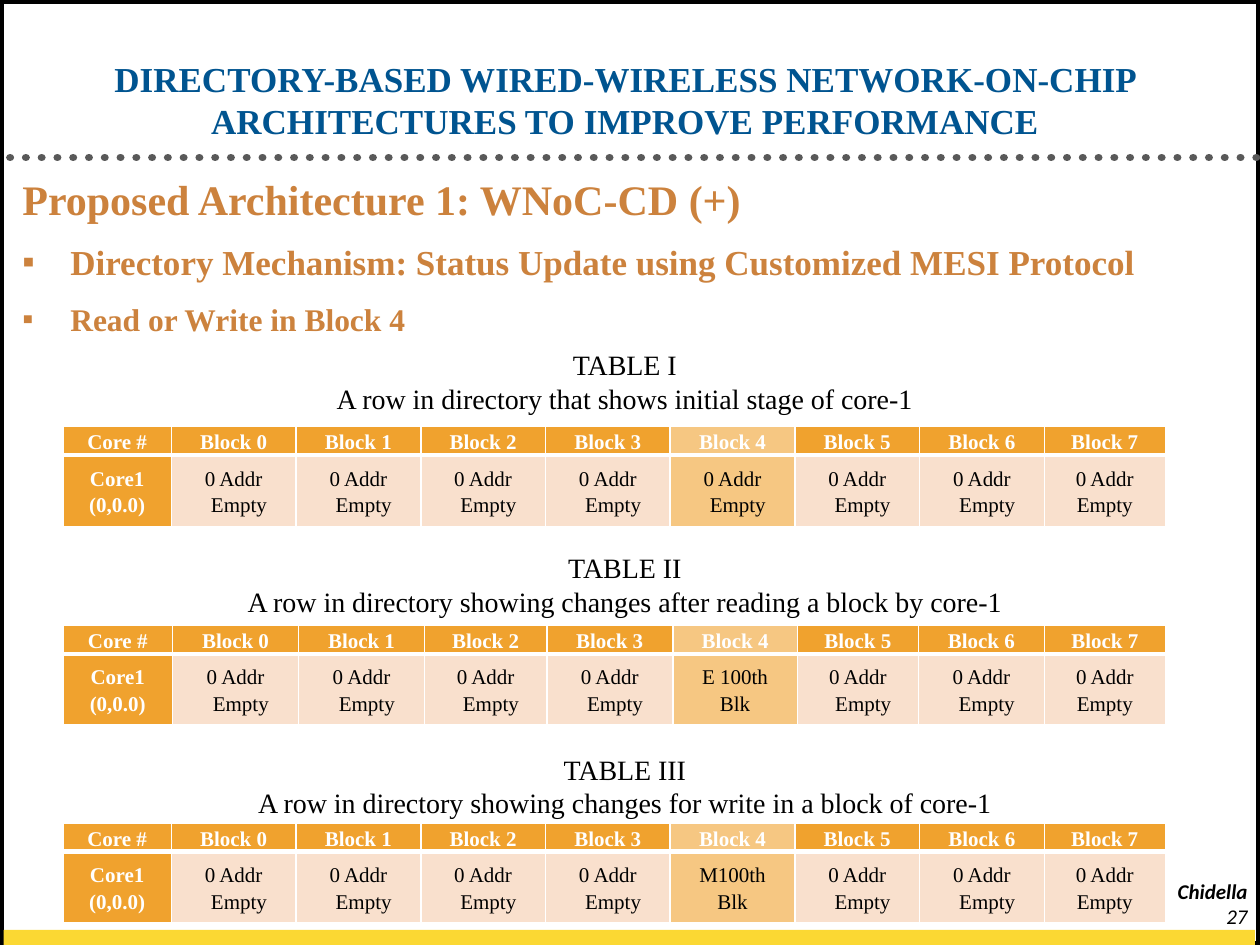
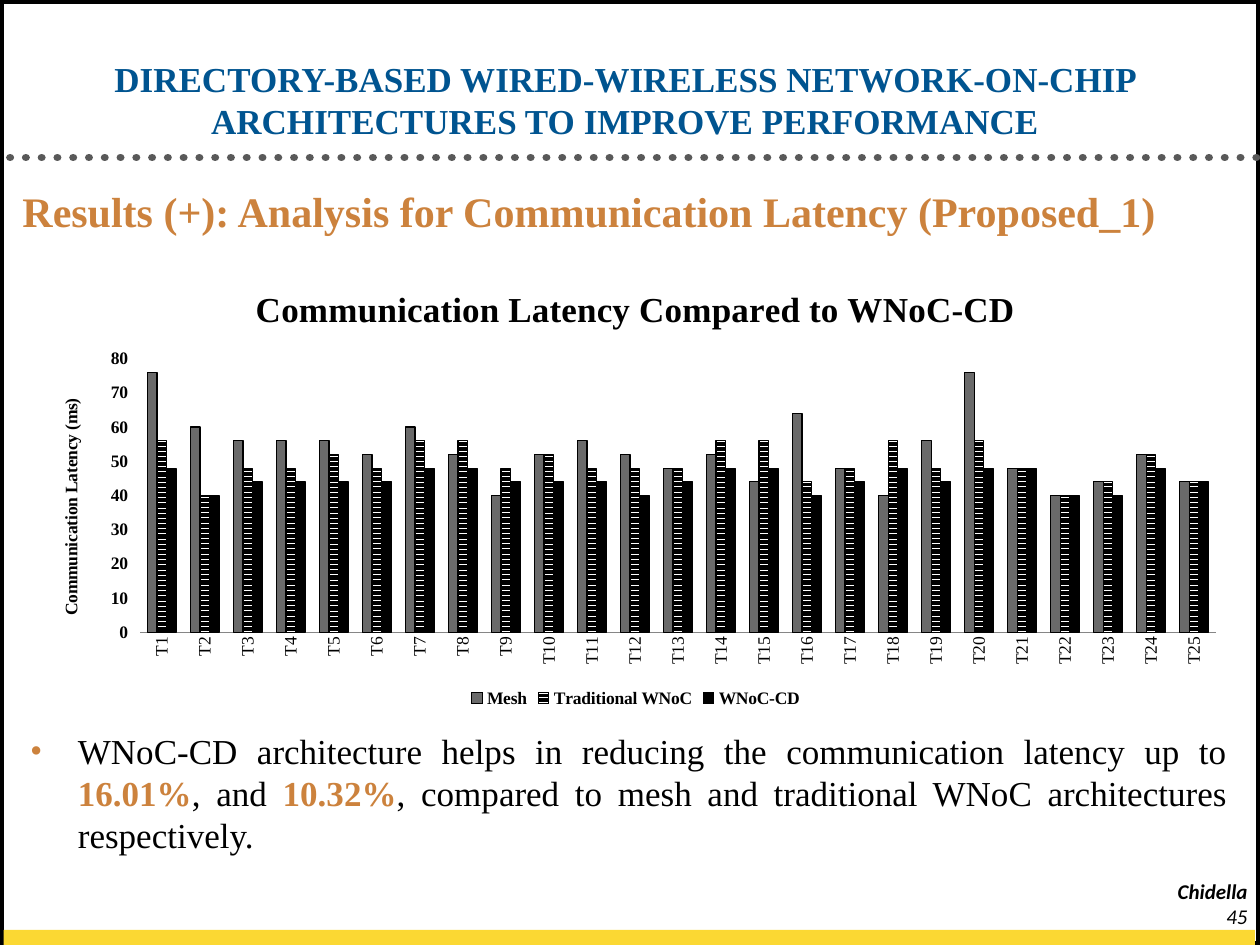
from dataclasses import dataclass

from lxml.etree import SubElement
from pptx import Presentation
from pptx.chart.data import CategoryChartData
from pptx.dml.color import RGBColor
from pptx.enum.chart import XL_CHART_TYPE, XL_LEGEND_POSITION, XL_TICK_MARK
from pptx.enum.dml import MSO_LINE, MSO_PATTERN
from pptx.enum.shapes import MSO_CONNECTOR, MSO_SHAPE
from pptx.enum.text import MSO_ANCHOR, MSO_AUTO_SIZE, PP_ALIGN
from pptx.oxml import parse_xml
from pptx.oxml.ns import nsdecls, qn
from pptx.util import Inches, Pt

# ---- Content ----
TITLE = ("DIRECTORY-BASED WIRED-WIRELESS NETWORK-ON-CHIP "
         "ARCHITECTURES TO IMPROVE PERFORMANCE")
AUTHOR = "Chidella"

DIRECTORY_PAGE = "27"
DIRECTORY_HEADING = "Proposed Architecture 1: WNoC-CD (+)"
DIRECTORY_POINTS = [
    ("Directory Mechanism: Status Update using Customized MESI Protocol", 20),
    ("Read or Write in Block 4", 18),
]
BLOCK_COUNT = 8
CHANGED_BLOCK = 4
CORE = ("Core1", "(0,0.0)")
EMPTY_BLOCK = ("0 Addr", "Empty")
EVEN_COLUMNS = [0.86] + [0.99] * 7 + [0.96]
DIRECTORY_TABLES = [
    dict(name="TABLE I", caption="A row in directory that shows initial stage of core-1",
         changed=EMPTY_BLOCK, caption_top=2.76, top=3.38, rows=(0.21, 0.57),
         columns=EVEN_COLUMNS),
    dict(name="TABLE II",
         caption="A row in directory showing changes after reading a block by core-1",
         changed=("E 100th", "Blk"), caption_top=4.37, top=4.96, rows=(0.23, 0.56),
         columns=[0.87, 1, 1, 0.97, 1, 0.99, 0.96, 1, 0.96]),
    dict(name="TABLE III",
         caption="A row in directory showing changes for write in a block of core-1",
         changed=("M100th", "Blk"), caption_top=5.97, top=6.53, rows=(0.21, 0.56),
         columns=EVEN_COLUMNS),
]

LATENCY_PAGE = "45"
LATENCY_HEADING = "Results (+): Analysis for Communication Latency (Proposed_1)"
LATENCY_CHART_TITLE = "Communication Latency Compared to WNoC-CD"
LATENCY_AXIS_TITLE = "Communication Latency (ms)"
LATENCY = {
    "Mesh": [76, 60, 56, 56, 56, 52, 60, 52, 40, 52, 56, 52, 48,
             52, 44, 64, 48, 40, 56, 76, 48, 40, 44, 52, 44],
    "Traditional WNoC": [56, 40, 48, 48, 52, 48, 56, 56, 48, 52, 48, 48, 48,
                         56, 56, 44, 48, 56, 48, 56, 48, 40, 44, 52, 44],
    "WNoC-CD": [48, 40, 44, 44, 44, 44, 48, 48, 44, 44, 44, 40, 44,
                48, 48, 40, 44, 48, 44, 48, 48, 40, 40, 48, 44],
}
EMPHASIS = dict(color="CC823D", bold=True)
LATENCY_SUMMARY = [
    ("WNoC-CD architecture helps in reducing the communication latency up to ", {}),
    ("16.01%", EMPHASIS),
    (", and ", {}),
    ("10.32%", EMPHASIS),
    (", compared to mesh and traditional WNoC architectures respectively.", {}),
]


# ---- Theme ----
@dataclass(frozen=True)
class Theme:
    serif: str = "Times New Roman"
    sans: str = "Calibri"
    title: str = "005490"
    accent: str = "CC823D"
    black: str = "000000"
    white: str = "FFFFFF"
    dots: str = "595959"
    band: str = "FBD833"
    header: str = "F0A22E"
    changed: str = "F6C782"
    cell: str = "F9E0CD"
    bar: str = "6A6A6A"
    axis: str = "868686"
    heading_size: int = 24
    title_size: int = 20
    caption_size: int = 16
    small_size: int = 12
    chart_size: int = 10
    tight: float = 0.9


THEME = Theme()
WIDTH, HEIGHT = 10, 7.5
BODY_LEFT, BODY_WIDTH = 0.08, 9.76


# ---- Helpers ----
def rgb(color):
    return RGBColor.from_string(color)


def style_font(font, size, color=THEME.black, bold=False, italic=False, name=THEME.serif):
    font.size, font.bold, font.italic, font.name = Pt(size), bold, italic, name
    font.color.rgb = rgb(color)


def write(frame, text, align=PP_ALIGN.LEFT, line_spacing=None, before=None, after=None,
          bullet=None, indent=None, **font_format):
    """Append a paragraph; text is a string or a list of (text, font overrides)."""
    paragraph = frame.paragraphs[0]
    if paragraph.runs:
        paragraph = frame.add_paragraph()
    paragraph.alignment = align
    properties = paragraph._p.get_or_add_pPr()
    if bullet:
        properties.set("marL", str(Inches(0.38)))
        properties.set("indent", str(-Inches(0.38)))
        color = SubElement(properties, qn("a:buClr"))
        SubElement(color, qn("a:srgbClr"), val=THEME.accent)
        SubElement(properties, qn("a:buFont"), typeface=THEME.serif)
        SubElement(properties, qn("a:buChar"), char=bullet)
    elif indent:
        properties.set("marL", str(Pt(indent)))
    if line_spacing:
        paragraph.line_spacing = line_spacing
    if before:
        paragraph.space_before = Pt(before)
    if after:
        paragraph.space_after = Pt(after)
    for run_text, overrides in [(text, {})] if isinstance(text, str) else text:
        run = paragraph.add_run()
        run.text = run_text
        style_font(run.font, **{**font_format, **overrides})


def add_text_box(slide, left, top, width, height, margins=(0.1, 0.05)):
    frame = slide.shapes.add_textbox(
        Inches(left), Inches(top), Inches(width), Inches(height)).text_frame
    frame.word_wrap = True
    frame.margin_left = frame.margin_right = Inches(margins[0])
    frame.margin_top = frame.margin_bottom = Inches(margins[1])
    return frame


def add_rectangle(slide, left, top, width, height, color):
    shape = slide.shapes.add_shape(
        MSO_SHAPE.RECTANGLE, Inches(left), Inches(top), Inches(width), Inches(height))
    shape.shadow.inherit = False
    shape.fill.solid()
    shape.fill.fore_color.rgb = rgb(color)
    shape.line.fill.background()
    return shape


# ---- Shared slide parts ----
def add_base_slide(presentation, page, heading, heading_top, heading_align):
    slide = presentation.slides.add_slide(presentation.slide_layouts[5])
    title = slide.shapes.title

    # Frame, dotted rule and bottom band
    frame = add_rectangle(slide, 0, 0, WIDTH, HEIGHT, THEME.white)
    frame.line.color.rgb = rgb(THEME.black)
    frame.line.width = Pt(4.5)
    rule = slide.shapes.add_connector(
        MSO_CONNECTOR.STRAIGHT, Inches(0.08), Inches(1.25), Inches(WIDTH), Inches(1.25))
    rule.line.color.rgb = rgb(THEME.dots)
    rule.line.width = Pt(4.5)
    rule.line.dash_style = MSO_LINE.ROUND_DOT
    rule._element.spPr.find(qn("a:ln")).set("cap", "rnd")
    SubElement(rule._element.spPr, qn("a:effectLst"))
    add_rectangle(slide, 0.03, 7.38, 9.93, 0.12, THEME.band)

    # Author and page number
    for text, top, bold in ((AUTHOR, 6.92, True), (page, 7.12, False)):
        write(add_text_box(slide, 9.08, top, 0.92, 0.26), text, align=PP_ALIGN.RIGHT,
              size=THEME.small_size, bold=bold, italic=True, name=THEME.sans)

    # Title, drawn above the frame
    slide.shapes._spTree.append(title._element)
    title.left, title.top = Inches(0.25), Inches(0.42)
    title.width, title.height = Inches(9.42), Inches(0.75)
    title.text_frame.auto_size = MSO_AUTO_SIZE.NONE
    title.text_frame.vertical_anchor = MSO_ANCHOR.BOTTOM
    write(title.text_frame, TITLE, align=PP_ALIGN.CENTER,
          size=THEME.title_size, color=THEME.title, bold=True)

    # Heading
    body = add_text_box(slide, BODY_LEFT, heading_top, BODY_WIDTH, 0.5)
    write(body, heading, align=heading_align, line_spacing=THEME.tight, after=6,
          size=THEME.heading_size, color=THEME.accent, bold=True)
    return slide, body


# ---- Directory tables ----
def set_borders(cell, **widths):
    properties = cell._tc.get_or_add_tcPr()
    for index, side in enumerate(("L", "R", "T", "B")):
        width = Pt(widths.get(side, 1))
        properties.insert(index, parse_xml(
            f'<a:ln{side} {nsdecls("a")} w="{width}"><a:solidFill>'
            f'<a:srgbClr val="{THEME.white}"/></a:solidFill></a:ln{side}>'))


def fill_cell(cell, lines, fill, color, bold, second_indent=None):
    cell.fill.solid()
    cell.fill.fore_color.rgb = rgb(fill)
    cell.vertical_anchor = MSO_ANCHOR.MIDDLE
    cell.margin_left = cell.margin_right = Inches(0.05)
    cell.margin_top = cell.margin_bottom = 0
    for number, line in enumerate(lines):
        write(cell.text_frame, line, align=PP_ALIGN.CENTER, line_spacing=1.15,
              indent=second_indent if number else None,
              size=THEME.small_size, color=color, bold=bold)


def add_directory_table(slide, item):
    caption = add_text_box(slide, BODY_LEFT, item["caption_top"], BODY_WIDTH, 0.54, (0, 0))
    for line in (item["name"], item["caption"]):
        write(caption, line, align=PP_ALIGN.CENTER, size=THEME.caption_size)

    columns, rows = item["columns"], item["rows"]
    table = slide.shapes.add_table(
        2, len(columns), Inches(0.5), Inches(item["top"]),
        Inches(sum(columns)), Inches(sum(rows))).table
    table.horz_banding = False
    for row, height in zip(table.rows, rows):
        row.height = Inches(height)
    for column, width in zip(table.columns, columns):
        column.width = Inches(width)

    headers = ["Core #"] + [f"Block {block}" for block in range(BLOCK_COUNT)]
    for index, header in enumerate(headers):
        block = index - 1
        changed = block == CHANGED_BLOCK
        top_cell, status_cell = table.cell(0, index), table.cell(1, index)
        fill_cell(top_cell, [header], THEME.changed if changed else THEME.header,
                  THEME.white, True)
        if block < 0:
            fill_cell(status_cell, CORE, THEME.header, THEME.white, True)
        else:
            lines = item["changed"] if changed else EMPTY_BLOCK
            shifted = lines == EMPTY_BLOCK and block < BLOCK_COUNT - 1
            fill_cell(status_cell, lines, THEME.changed if changed else THEME.cell,
                      THEME.black, False, second_indent=6 if shifted else None)
        set_borders(top_cell, B=3)
        set_borders(status_cell, T=3)


def build_directory_slide(presentation):
    slide, body = add_base_slide(presentation, DIRECTORY_PAGE, DIRECTORY_HEADING,
                                 1.37, PP_ALIGN.LEFT)
    for text, size in DIRECTORY_POINTS:
        write(body, text, bullet="▪", line_spacing=THEME.tight, before=6, after=6,
              size=size, color=THEME.accent, bold=True)
    for item in DIRECTORY_TABLES:
        add_directory_table(slide, item)


# ---- Latency chart ----
def add_latency_chart(slide):
    data = CategoryChartData()
    data.categories = [f"T{number}" for number in range(1, len(LATENCY["Mesh"]) + 1)]
    for name, values in LATENCY.items():
        data.add_series(name, values)
    chart = slide.shapes.add_chart(
        XL_CHART_TYPE.COLUMN_CLUSTERED, Inches(0.25), Inches(2.1),
        Inches(9.59), Inches(3.56), data).chart
    style_font(chart.font, THEME.chart_size)
    chart.has_title = True
    write(chart.chart_title.text_frame, LATENCY_CHART_TITLE, align=PP_ALIGN.CENTER,
          size=THEME.title_size, bold=True)
    chart.has_legend = True
    chart.legend.position = XL_LEGEND_POSITION.BOTTOM
    chart.legend.include_in_layout = False
    style_font(chart.legend.font, THEME.chart_size, bold=True)

    # Axes
    names, values = chart.category_axis, chart.value_axis
    names.major_tick_mark = XL_TICK_MARK.NONE
    names.format.line.color.rgb = rgb(THEME.axis)
    style_font(names.tick_labels.font, THEME.chart_size)
    names._element.find(qn("c:txPr")).find(qn("a:bodyPr")).set("rot", "-5400000")
    values.has_major_gridlines = False
    values.minimum_scale, values.maximum_scale, values.major_unit = 0, 80, 10
    values.major_tick_mark = XL_TICK_MARK.OUTSIDE
    values.format.line.fill.background()
    style_font(values.tick_labels.font, THEME.chart_size, bold=True)
    values.has_title = True
    write(values.axis_title.text_frame, LATENCY_AXIS_TITLE, align=PP_ALIGN.CENTER,
          size=THEME.chart_size, bold=True)

    # Bars
    plot = chart.plots[0]
    plot.gap_width, plot.overlap, plot.vary_by_categories = 150, 0, False
    for series, color in zip(plot.series, (THEME.bar, None, THEME.black)):
        fill = series.format.fill
        if color:
            fill.solid()
            fill.fore_color.rgb = rgb(color)
        else:
            fill.patterned()
            fill.pattern = MSO_PATTERN.DARK_HORIZONTAL
            fill.fore_color.rgb, fill.back_color.rgb = rgb(THEME.black), rgb(THEME.white)
        series.format.line.color.rgb = rgb(THEME.black)
        series.format.line.width = Pt(0.75)

    # Plot area as shares of the chart
    area = chart._chartSpace.chart.plotArea
    for old_layout in area.findall(qn("c:layout")):
        area.remove(old_layout)
    layout = parse_xml(f'<c:layout {nsdecls("c")}><c:manualLayout/></c:layout>')
    for tag, value in (("layoutTarget", "inner"), ("xMode", "edge"), ("yMode", "edge"),
                       ("x", "0.09"), ("y", "0.21"), ("w", "0.89"), ("h", "0.61")):
        SubElement(layout[0], qn(f"c:{tag}"), val=value)
    area.insert(0, layout)


def build_latency_slide(presentation):
    slide, _ = add_base_slide(presentation, LATENCY_PAGE, LATENCY_HEADING,
                              1.47, PP_ALIGN.JUSTIFY)
    add_latency_chart(slide)
    summary = add_text_box(slide, 0.14, 5.74, 9.7, 1.11)
    write(summary, LATENCY_SUMMARY, align=PP_ALIGN.JUSTIFY, bullet="•",
          size=THEME.title_size)


def main():
    presentation = Presentation()
    presentation.slide_width, presentation.slide_height = Inches(WIDTH), Inches(HEIGHT)
    build_directory_slide(presentation)
    build_latency_slide(presentation)
    presentation.save("out.pptx")


if __name__ == "__main__":
    main()
